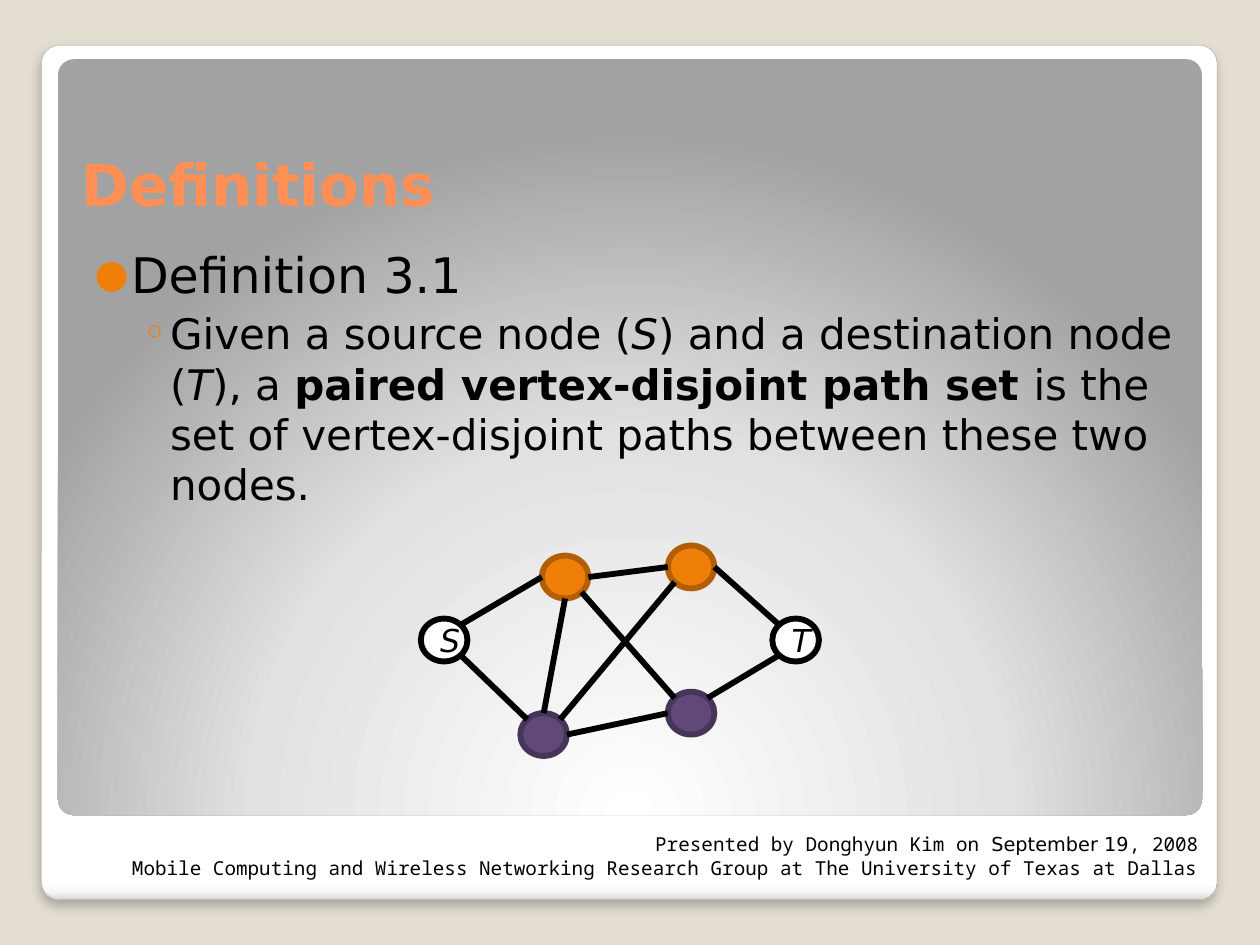
from math import cos, radians, sin
from typing import NamedTuple, Optional

from lxml import etree
from pptx import Presentation
from pptx.dml.color import RGBColor
from pptx.enum import shapes, text
from pptx.oxml import parse_xml
from pptx.oxml.ns import qn
from pptx.util import Inches, Pt

COLORS = {
    "background": "E3DED1", "black": "000000", "white": "FFFFFF",
    "title": "FF8F55", "bullet": "F07F09", "card_line": "A4A4A4",
    "orange": "F07F09", "orange_line": "B25E07",
    "purple": "604878", "purple_line": "473559",
}
SANS, MONO = "DejaVu Sans", "Noto Sans Mono"
NS = 'xmlns:a="http://schemas.openxmlformats.org/drawingml/2006/main"'
NODE_W, NODE_H, STROKE = 0.37, 0.34, 3.35
SITES = {"right": 0, "lower right": 45, "bottom": 90, "lower left": 135,
         "left": 180, "upper left": 225, "top": 270, "upper right": 315}


class Node(NamedTuple):
    left: float
    top: float
    fill: str
    line: str
    label: str = ""


class Edge(NamedTuple):
    start: str
    start_site: str
    end: str
    end_site: str


class Span(NamedTuple):
    words: str
    font: str = SANS
    bold: bool = False
    italic: bool = False


class Bullet(NamedTuple):
    char: str
    margin: float
    hanging: float
    percent: Optional[int] = None


NODES = {
    "S": Node(3.34, 4.91, "white", "black", "S"),
    "T": Node(6.13, 4.91, "white", "black", "T"),
    "A": Node(4.3, 4.41, "orange", "orange_line"),
    "B": Node(5.3, 4.33, "orange", "orange_line"),
    "C": Node(4.13, 5.66, "purple", "purple_line"),
    "D": Node(5.3, 5.49, "purple", "purple_line"),
}
EDGES = [
    Edge("C", "upper left", "S", "lower right"),
    Edge("D", "left", "C", "right"),
    Edge("S", "upper right", "A", "left"),
    Edge("D", "upper left", "A", "lower right"),
    Edge("C", "upper right", "B", "lower left"),
    Edge("C", "top", "A", "bottom"),
    Edge("A", "right", "B", "left"),
    Edge("T", "upper left", "B", "right"),
    Edge("D", "upper right", "T", "lower left"),
]
DEFINITION = [
    Span("Given a source node ("), Span("S", italic=True),
    Span(") and a destination node ("), Span("T", italic=True), Span("), a "),
    Span("paired vertex-disjoint path set ", bold=True),
    Span("is the set of vertex-disjoint paths between these two nodes."),
]


def rgb(name: str) -> RGBColor:
    """Return the named colour."""
    return RGBColor.from_string(COLORS[name])


def add_spans(p, spans: list, size: float, color: str = "black") -> None:
    """Append formatted runs to a paragraph."""
    for span in spans:
        r = p.add_run()
        r.text = span.words
        r.font.name, r.font.size = span.font, Pt(size)
        r.font.bold, r.font.italic = span.bold, span.italic
        r.font.color.rgb = rgb(color)


def add_bullet(p, bullet: Bullet) -> None:
    """Give a paragraph its bullet and hanging indent."""
    p.space_before = Pt(2.5)
    pPr = p._p.get_or_add_pPr()
    pPr.set("marL", str(Inches(bullet.margin)))
    pPr.set("indent", str(-Inches(bullet.hanging)))
    color = etree.SubElement(pPr, qn("a:buClr"))
    etree.SubElement(color, qn("a:srgbClr"), val=COLORS["bullet"])
    if bullet.percent:
        etree.SubElement(pPr, qn("a:buSzPct"), val=str(bullet.percent * 1000))
    etree.SubElement(pPr, qn("a:buFont"), typeface=SANS)
    etree.SubElement(pPr, qn("a:buChar"), char=bullet.char)


def add_text_frame(s, left: float, top: float, width: float, height: float):
    """Add a wrapping text box and return its frame."""
    box = s.shapes.add_textbox(*map(Inches, (left, top, width, height)))
    tf = box.text_frame
    tf.word_wrap = True
    return tf


def add_panel(s, left: float, top: float, width: float, height: float,
              stops: list, direction: str):
    """Add a rounded panel with a gradient fill."""
    sp = s.shapes.add_shape(shapes.MSO_SHAPE.ROUNDED_RECTANGLE,
                            *map(Inches, (left, top, width, height)))
    sp.adjustments[0] = 0.021
    sp.shadow.inherit = False
    sp.line.fill.background()
    marks = "".join(f'<a:gs pos="{pos * 1000}"><a:srgbClr val="{color}"/></a:gs>'
                    for pos, color in stops)
    fill = parse_xml(f'<a:gradFill {NS} rotWithShape="1">'
                     f'<a:gsLst>{marks}</a:gsLst>{direction}</a:gradFill>')
    sp._element.spPr.find(qn("a:prstGeom")).addnext(fill)
    return sp


def add_node(s, node: Node) -> None:
    """Add a graph node with its optional label."""
    sp = s.shapes.add_shape(shapes.MSO_SHAPE.OVAL, Inches(node.left),
                            Inches(node.top), Inches(NODE_W), Inches(NODE_H))
    sp.shadow.inherit = False
    sp.fill.solid()
    sp.fill.fore_color.rgb = rgb(node.fill)
    sp.line.color.rgb = rgb(node.line)
    sp.line.width = Pt(STROKE)
    if node.label:
        p = sp.text_frame.paragraphs[0]
        p.alignment = text.PP_ALIGN.CENTER
        add_spans(p, [Span(node.label, italic=True)], 18)


def site_point(node: Node, site: str) -> tuple:
    """Return the point of a connection site on a node's rim."""
    angle = radians(SITES[site])
    return (Inches(node.left + NODE_W / 2 * (1 + cos(angle))),
            Inches(node.top + NODE_H / 2 * (1 + sin(angle))))


def add_edge(s, edge: Edge) -> None:
    """Join two nodes with a straight line."""
    line = s.shapes.add_connector(
        shapes.MSO_CONNECTOR.STRAIGHT,
        *site_point(NODES[edge.start], edge.start_site),
        *site_point(NODES[edge.end], edge.end_site))
    line.line.color.rgb = rgb("black")
    line.line.width = Pt(STROKE)
    etree.SubElement(line._element.spPr, qn("a:effectLst"))


def main() -> None:
    """Build the definitions slide."""
    prs = Presentation()
    prs.slide_width, prs.slide_height = Inches(10), Inches(7.5)
    s = prs.slides.add_slide(prs.slide_layouts[6])
    s.background.fill.solid()
    s.background.fill.fore_color.rgb = rgb("background")

    card = add_panel(s, 0.33, 0.36, 9.33, 6.78,
                     [(0, "FFFFFF"), (98, "FFFFFF"), (99, "F7F7F7"), (100, "DADADA")],
                     '<a:lin ang="5400000" scaled="0"/>')
    card.line.color.rgb = rgb("card_line")
    card.line.width = Pt(0.16)
    card._element.spPr.find(qn("a:effectLst")).append(parse_xml(
        f'<a:outerShdw {NS} blurRad="{Pt(6)}" dist="{Pt(4)}" dir="5400000" rotWithShape="0">'
        '<a:srgbClr val="000000"><a:alpha val="25000"/></a:srgbClr></a:outerShdw>'))
    add_panel(s, 0.46, 0.47, 9.08, 6, [(0, "FFFFFF"), (55, "E1E1E1"), (100, "A2A2A2")],
              '<a:path path="circle"><a:fillToRect l="50000" t="175000" r="50000" b="-75000"/></a:path>')

    tf = add_text_frame(s, 0.55, 1.13, 8.95, 0.63)
    add_spans(tf.paragraphs[0], [Span("Definitions", bold=True)], 33, "title")

    tf = add_text_frame(s, 0.55, 1.84, 8.95, 4.58)
    tf.margin_left, tf.margin_top = Inches(0.2), Inches(0.1)
    add_bullet(tf.paragraphs[0], Bullet("●", 0.29, 0.29, 80))
    add_spans(tf.paragraphs[0], [Span("Definition 3.1")], 28)
    p = tf.add_paragraph()
    p.level = 1
    add_bullet(p, Bullet("◦", 0.6, 0.22))
    add_spans(p, DEFINITION, 24)

    p = add_text_frame(s, 0.58, 6.56, 9.03, 0.47).paragraphs[0]
    p.alignment = text.PP_ALIGN.RIGHT
    add_spans(p, [Span("Presented by Donghyun Kim on ", MONO), Span("September 19"),
                  Span(", 2008", MONO)], 11)
    p.add_line_break()
    add_spans(p, [Span("Mobile Computing and Wireless Networking Research Group "
                       "at The University of Texas at Dallas", MONO)], 11)

    for node in NODES.values():
        add_node(s, node)
    for edge in EDGES:
        add_edge(s, edge)
    prs.save("out.pptx")


if __name__ == "__main__":
    main()
